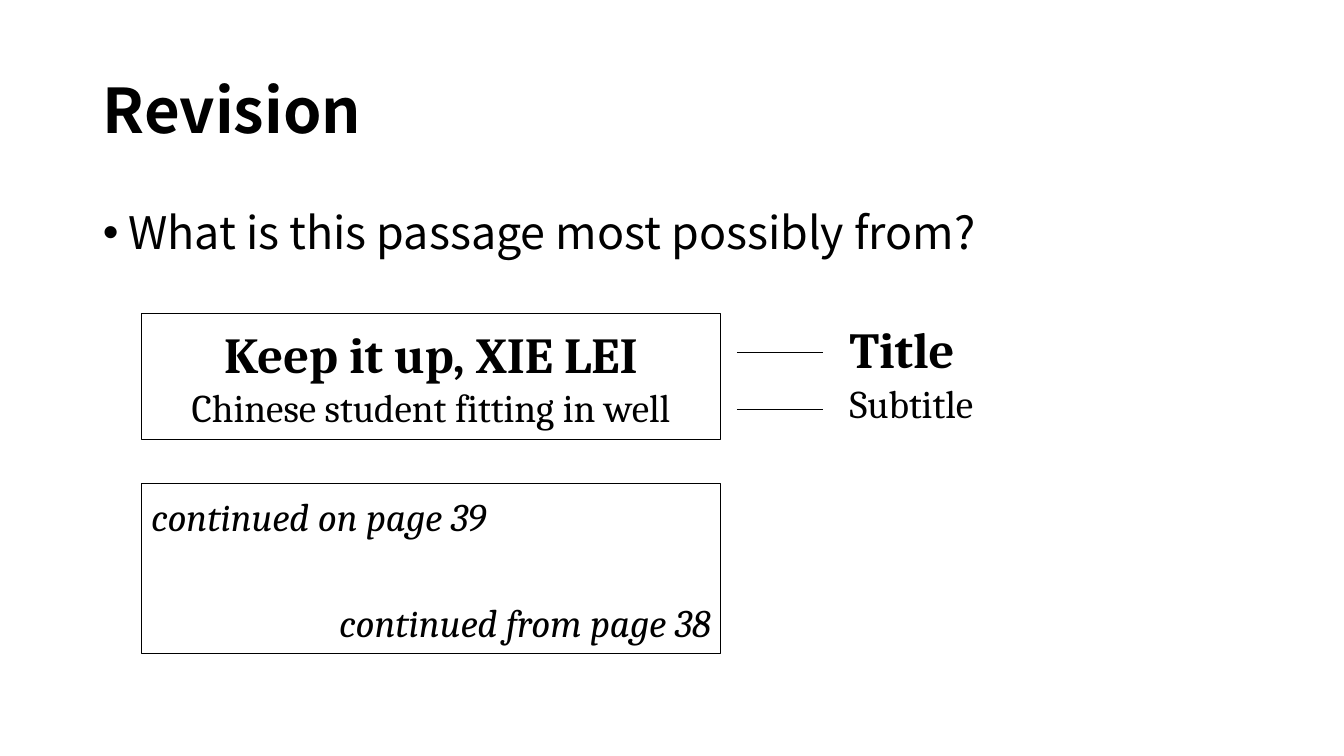
from dataclasses import dataclass

from lxml import etree
from pptx import Presentation
from pptx.dml.color import RGBColor
from pptx.enum.shapes import MSO_CONNECTOR, MSO_SHAPE
from pptx.enum.text import MSO_ANCHOR, MSO_AUTO_SIZE, PP_ALIGN
from pptx.oxml.ns import qn
from pptx.shapes.base import BaseShape
from pptx.slide import Slide
from pptx.text.text import TextFrame
from pptx.util import Pt

LEFT, CENTER, RIGHT = PP_ALIGN.LEFT, PP_ALIGN.CENTER, PP_ALIGN.RIGHT
TOP, MIDDLE = MSO_ANCHOR.TOP, MSO_ANCHOR.MIDDLE
NO_AUTOFIT = MSO_AUTO_SIZE.NONE
RECTANGLE = MSO_SHAPE.RECTANGLE
STRAIGHT = MSO_CONNECTOR.STRAIGHT


@dataclass(frozen=True)
class Theme:
    ink: RGBColor = RGBColor(0, 0, 0)
    paper: RGBColor = RGBColor(255, 255, 255)
    slide_font: str = "Noto Sans CJK SC"
    passage_font: str = "Cambria"
    title_size: float = 44
    question_size: float = 32
    headline_size: float = 36
    detail_size: float = 28
    line_width: float = 0.75


THEME = Theme()


@dataclass(frozen=True)
class Frame:
    left: float
    top: float
    width: float
    height: float


@dataclass(frozen=True)
class Line:
    text: str
    size: float
    font: str = THEME.passage_font
    bold: bool = False
    italic: bool = False
    align: PP_ALIGN = LEFT
    spacing: float = 1.0
    before: float = 0
    after: float = 0
    bullet_indent: float = 0


@dataclass(frozen=True)
class Passage:
    frame: Frame
    lines: tuple[Line, ...]


TITLE_FRAME = Frame(66.24, 28.8, 828, 104.4)
BODY_FRAME = Frame(66.24, 146.88, 828, 342.72)
LABEL_FRAME = Frame(599.76, 223.92, 136, 84.24)

TITLE = Line("Revision", THEME.title_size, THEME.slide_font, bold=True, spacing=0.9)
QUESTION = Line("What is this passage most possibly from?", THEME.question_size,
                THEME.slide_font, spacing=0.9, bullet_indent=18)
LABELS = (
    Line("Title", THEME.headline_size, bold=True),
    Line("Subtitle", THEME.detail_size),
)
PASSAGES = (
    Passage(Frame(100.8, 223.92, 414, 90), (
        Line("Keep it up, XIE LEI", THEME.headline_size, bold=True, align=CENTER),
        Line("Chinese student fitting in well", THEME.detail_size, align=CENTER),
    )),
    Passage(Frame(100.8, 345.6, 414, 120.96), (
        Line("continued on page 39", THEME.detail_size, italic=True, after=24),
        Line("continued from page 38", THEME.detail_size, italic=True,
             align=RIGHT, before=18),
    )),
)
LEADER_START, LEADER_END = 526.3, 588.2
LEADER_HEIGHTS = (252, 292.3)


def write_lines(text_frame: TextFrame, lines: tuple[Line, ...], anchor: MSO_ANCHOR) -> None:
    text_frame.word_wrap = True
    text_frame.auto_size = NO_AUTOFIT
    text_frame.vertical_anchor = anchor
    for index, line in enumerate(lines):
        para = text_frame.add_paragraph() if index else text_frame.paragraphs[0]
        para.text = line.text
        para.alignment = line.align
        para.line_spacing = line.spacing
        para.space_before = Pt(line.before)
        para.space_after = Pt(line.after)
        if line.bullet_indent:
            properties = para._p.get_or_add_pPr()
            properties.set("marL", str(Pt(line.bullet_indent)))
            properties.set("indent", str(-Pt(line.bullet_indent)))
            etree.SubElement(properties, qn("a:buFont")).set("typeface", "Arial")
            etree.SubElement(properties, qn("a:buChar")).set("char", "•")
        font = para.font
        font.name = line.font
        font.size = Pt(line.size)
        font.bold = line.bold
        font.italic = line.italic
        font.color.rgb = THEME.ink


def place(shape: BaseShape, frame: Frame) -> None:
    shape.left, shape.top = Pt(frame.left), Pt(frame.top)
    shape.width, shape.height = Pt(frame.width), Pt(frame.height)


def add_passage(page: Slide, passage: Passage) -> None:
    frame = passage.frame
    box = page.shapes.add_shape(RECTANGLE, Pt(frame.left), Pt(frame.top),
                                Pt(frame.width), Pt(frame.height))
    box.shadow.inherit = False
    box.fill.background()
    box.line.color.rgb = THEME.ink
    box.line.width = Pt(THEME.line_width)
    write_lines(box.text_frame, passage.lines, MIDDLE)


def add_leader(page: Slide, height: float) -> None:
    """Draw the horizontal line between a passage line and its label."""
    leader = page.shapes.add_connector(STRAIGHT, Pt(LEADER_START), Pt(height),
                                       Pt(LEADER_END), Pt(height))
    leader.line.color.rgb = THEME.ink
    leader.line.width = Pt(THEME.line_width)
    etree.SubElement(leader._element.spPr, qn("a:effectLst"))


def add_labels(page: Slide) -> None:
    frame = LABEL_FRAME
    box = page.shapes.add_textbox(Pt(frame.left), Pt(frame.top),
                                  Pt(frame.width), Pt(frame.height))
    write_lines(box.text_frame, LABELS, TOP)


def main() -> None:
    deck = Presentation()
    deck.slide_width, deck.slide_height = Pt(960), Pt(540)
    page = deck.slides.add_slide(deck.slide_layouts[1])
    page.background.fill.solid()
    page.background.fill.fore_color.rgb = THEME.paper

    title, body = page.shapes.title, page.placeholders[1]
    place(title, TITLE_FRAME)
    write_lines(title.text_frame, (TITLE,), MIDDLE)
    place(body, BODY_FRAME)
    write_lines(body.text_frame, (QUESTION,), TOP)

    for passage in PASSAGES:
        add_passage(page, passage)
    for height in LEADER_HEIGHTS:
        add_leader(page, height)
    add_labels(page)
    deck.save("out.pptx")


if __name__ == "__main__":
    main()
